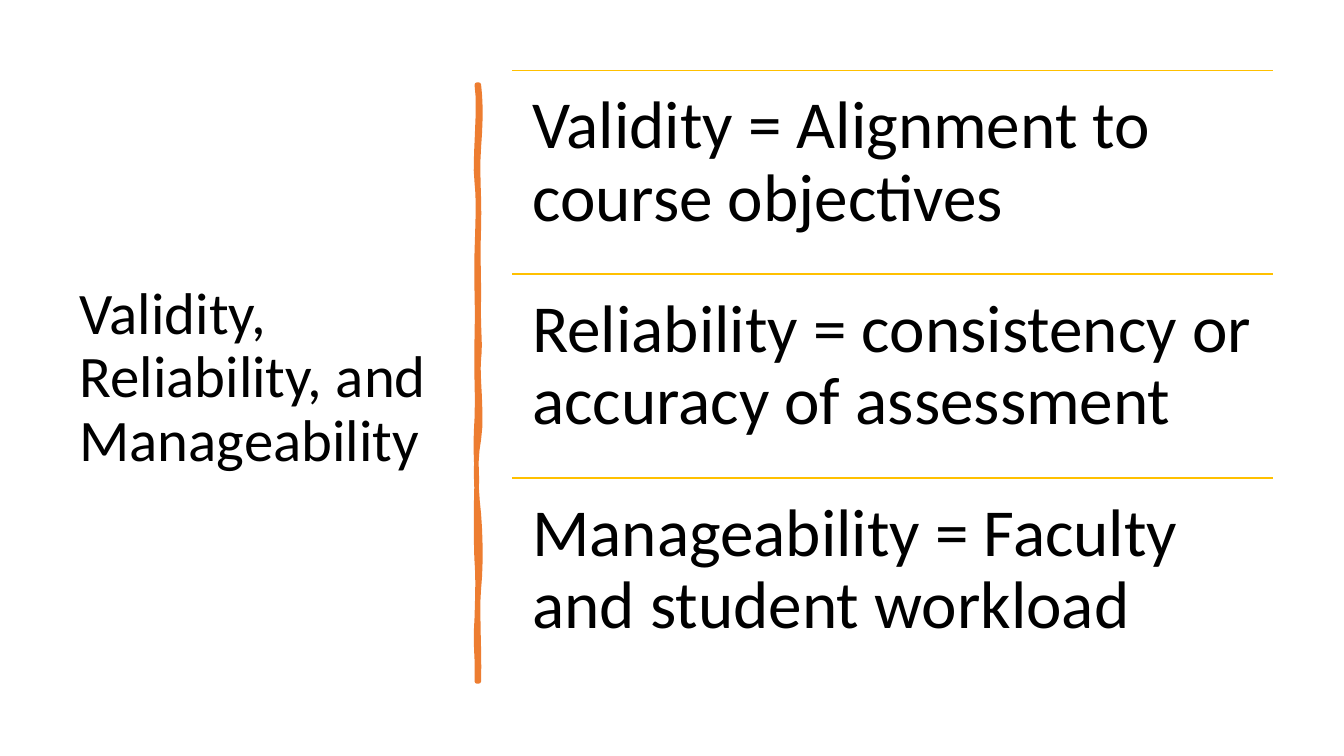
import pptx
import pptx.util
import pptx.dml.color
import pptx.enum.shapes
import pptx.enum.text
import pptx.oxml.ns
import lxml.etree

Pt = pptx.util.Pt
ANCHOR = pptx.enum.text.MSO_ANCHOR
COLORS = {"text": "000000", "stroke": "ED7D31", "rule": "FFC000"}
TITLE = "Validity, Reliability, and Manageability"
DEFINITIONS = [
    "Validity = Alignment to course objectives",
    "Reliability = consistency or accuracy of assessment",
    "Manageability = Faculty and student workload",
]
STROKE_START = (0.7, 0)
STROKE_CURVES = [
    (2.2, 13, 2.2, 25.2, 0.7, 44.6),
    (-0.7, 64.1, 1.4, 79.9, 0.7, 102.2),
    (0, 124.6, 0.7, 128.2, 0.7, 151.2),
    (0, 173.5, 2.2, 185.8, 0.7, 195.8),
    (-0.7, 205.9, 3.6, 237.6, 0.7, 253.4),
    (-2.2, 268.6, -1.4, 288, 0.7, 306.7),
    (2.2, 325.4, 2.2, 345.6, 0.7, 360),
    (-0.7, 373.7, 1.4, 407.5, 0.7, 426.2),
    (0, 426.2, -0.7, 426.2, -0.7, 426.2),
    (0, 404.6, -2.2, 403.2, -0.7, 380.9),
    (0, 359.3, 0, 349.9, -0.7, 340.6),
    (-1.4, 331.2, -1.4, 295.9, -0.7, 283),
    (-0.7, 270, -2.2, 259.9, -0.7, 238.3),
    (0, 217.4, -1.4, 208.1, -0.7, 180.7),
    (0, 154.1, -1.4, 141.8, -0.7, 119.5),
    (0, 96.5, 0.7, 83.5, -0.7, 69.8),
    (-2.9, 56.9, 2.2, 14.4, -0.7, 0),
]


def rgb(name):
    return pptx.dml.color.RGBColor.from_string(COLORS[name])


def add_text(s, box, text, size, anchor, insets):
    sp = s.shapes.add_textbox(*map(Pt, box))
    tf = sp.text_frame
    frame_format = {"word_wrap": True, "vertical_anchor": anchor}
    for side, inset in zip(("left", "top", "right", "bottom"), insets):
        frame_format["margin_" + side] = Pt(inset)
    for name, value in frame_format.items():
        setattr(tf, name, value)
    p = tf.paragraphs[0]
    p.line_spacing = 0.9
    r = p.add_run()
    r.text = text
    for name, value in {"name": "Calibri", "size": Pt(size)}.items():
        setattr(r.font, name, value)
    r.font.color.rgb = rgb("text")


def add_title(s, box):
    add_text(s, box, TITLE, 42, ANCHOR.MIDDLE, (7.2, 3.6, 7.2, 3.6))


def curve_points(start, curves, steps=6):
    x0, y0 = start
    for x1, y1, x2, y2, x3, y3 in curves:
        for i in range(1, steps + 1):
            t = i / steps
            u = 1 - t
            weights = (u ** 3, 3 * u * u * t, 3 * u * t * t, t ** 3)
            yield tuple(
                sum(w * c for w, c in zip(weights, axis))
                for axis in ((x0, x1, x2, x3), (y0, y1, y2, y3))
            )
        x0, y0 = x3, y3


def add_brush_stroke(s, center, top):
    def place(x, y):
        return Pt(center + x), Pt(top + y)

    builder = s.shapes.build_freeform(*place(*STROKE_START))
    points = curve_points(STROKE_START, STROKE_CURVES)
    builder.add_line_segments([place(x, y) for x, y in points], close=True)
    sp = builder.convert_to_shape()
    sp.shadow.inherit = False
    sp.fill.solid()
    sp.fill.fore_color.rgb = rgb("stroke")
    sp.line.color.rgb = rgb("stroke")
    sp.line.width = Pt(3.25)


def add_rule(s, left, top, width):
    line = s.shapes.add_connector(
        pptx.enum.shapes.MSO_CONNECTOR.STRAIGHT,
        Pt(left), Pt(top), Pt(left + width), Pt(top))
    line.line.color.rgb = rgb("rule")
    line.line.width = Pt(1)
    lxml.etree.SubElement(
        line._element.spPr, pptx.oxml.ns.qn("a:effectLst"))


def add_definitions(s, box):
    left, top, width, height = box
    row = height / len(DEFINITIONS)
    for i, text in enumerate(DEFINITIONS):
        y = top + i * row
        add_rule(s, left, y, width)
        add_text(s, (left, y, width, row), text, 48, ANCHOR.TOP, [14.4] * 4)


def main():
    prs = pptx.Presentation()
    prs.slide_width, prs.slide_height = Pt(960), Pt(540)
    s = prs.slides.add_slide(prs.slide_layouts[6])
    add_title(s, (49.7, 50.4, 269.3, 440))
    add_brush_stroke(s, 341.3, 60.5)
    add_definitions(s, (365.8, 50.4, 543.6, 436.4))
    prs.save("out.pptx")


if __name__ == "__main__":
    main()
